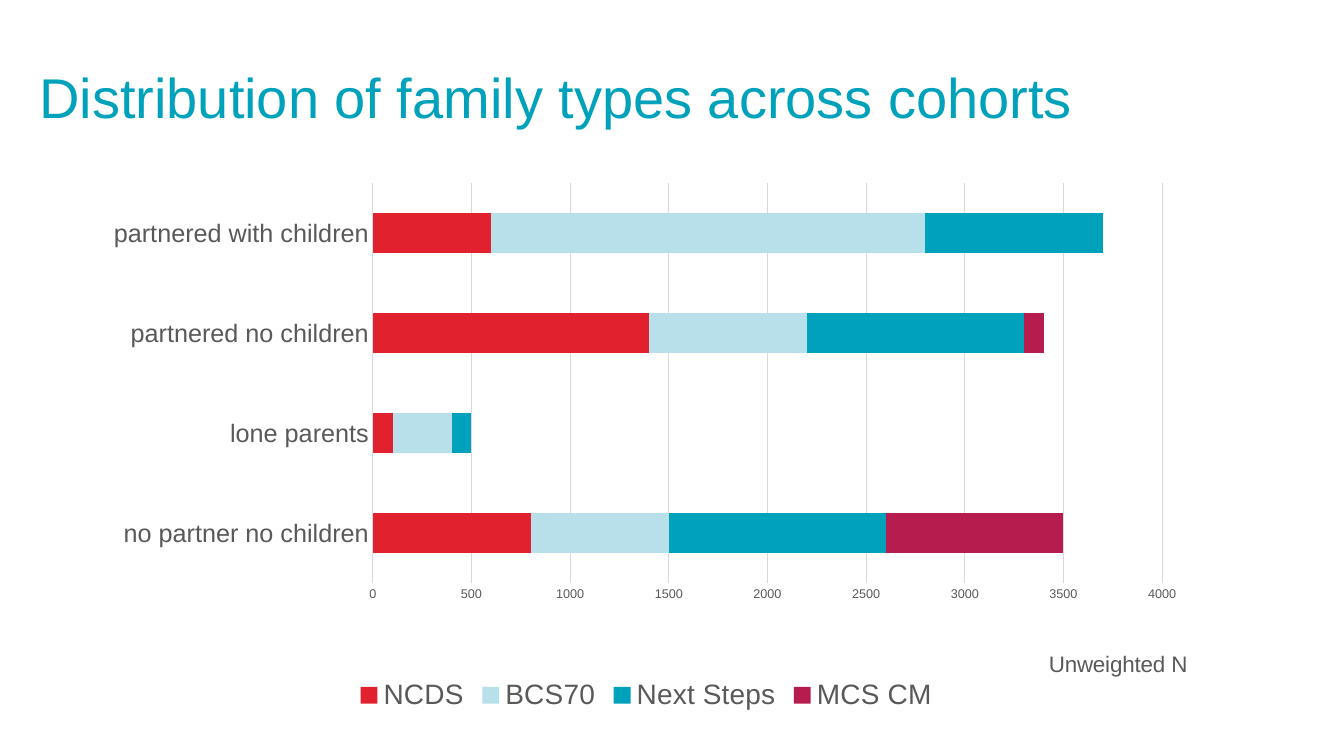
"""Build a slide with a stacked bar chart of family types by cohort."""
from lxml import etree
from pptx import Presentation
from pptx.chart.data import CategoryChartData
from pptx.dml.color import RGBColor
from pptx.enum.chart import XL_CHART_TYPE, XL_LEGEND_POSITION, XL_TICK_MARK
from pptx.enum.text import MSO_ANCHOR, PP_ALIGN
from pptx.oxml.ns import qn
from pptx.util import Inches, Pt

STACKED = XL_CHART_TYPE.BAR_STACKED
BOTTOM = XL_LEGEND_POSITION.BOTTOM
NO_TICK = XL_TICK_MARK.NONE
MIDDLE = MSO_ANCHOR.MIDDLE
LEFT = PP_ALIGN.LEFT

FACE = "Arial"
COLORS = {
    "title": "00A1BA",
    "text": "595959",
    "grid": "D9D9D9",
    "NCDS": "E2212F",
    "BCS70": "B7E0EB",
    "Next Steps": "00A1BA",
    "MCS CM": "B61D4E",
}
TYPES = ["no partner no children", "lone parents",
         "partnered no children", "partnered with children"]
COHORTS = {
    "NCDS": (800, 100, 1400, 600),
    "BCS70": (700, 300, 800, 2200),
    "Next Steps": (1100, 100, 1100, 900),
    "MCS CM": (900, 0, 100, 0),
}


def color(name):
    """Return the named colour."""
    return RGBColor.from_string(COLORS[name])


def style(font, size, tone="text"):
    """Set face, size and colour of a font."""
    font.name = FACE
    font.size = Pt(size)
    font.bold = False
    font.color.rgb = color(tone)


def write(frame, text, size=16, tone="text", align=None, spacing=None):
    """Put formatted text in a text frame."""
    frame.text = text
    para = frame.paragraphs[0]
    para.alignment = align
    para.line_spacing = spacing
    style(para.runs[0].font, size, tone)


def rule(line):
    """Draw a line in the thin grid style."""
    line.color.rgb = color("grid")
    line.width = Pt(0.75)


def place(node, index, inner=False, **box):
    """Give a chart part a manual layout in fractions of the chart."""
    for old in node.findall(qn("c:layout")):
        node.remove(old)
    layout = etree.Element(qn("c:layout"))
    manual = etree.SubElement(layout, qn("c:manualLayout"))
    items = {"xMode": "edge", "yMode": "edge", **box}
    if inner:
        items = {"layoutTarget": "inner", **items}
    for tag, value in items.items():
        etree.SubElement(manual, qn(f"c:{tag}")).set("val", str(value))
    node.insert(index, layout)


def add_title(slide, text):
    """Fill and move the title placeholder."""
    title = slide.shapes.title
    title.left, title.top = Inches(0.39), Inches(0.56)
    title.width, title.height = Inches(11.5), Inches(0.87)
    frame = title.text_frame
    frame.margin_left = frame.margin_right = 0
    frame.margin_top = frame.margin_bottom = 0
    frame.vertical_anchor = MIDDLE
    frame.word_wrap = True
    write(frame, text, size=40, tone="title", align=LEFT, spacing=0.9)


def format_axes(chart):
    """Format both axes and the value axis title."""
    for axis, size in ((chart.category_axis, 18), (chart.value_axis, 9)):
        axis.major_tick_mark = axis.minor_tick_mark = NO_TICK
        style(axis.tick_labels.font, size)
    rule(chart.category_axis.format.line)
    scale = chart.value_axis
    scale.minimum_scale, scale.maximum_scale = 0, 4000
    scale.major_unit = 500
    scale.format.line.fill.background()
    scale.has_major_gridlines = True
    rule(scale.major_gridlines.format.line)
    write(scale.axis_title.text_frame, "Unweighted N")
    place(scale.axis_title.element, 1, x=0.86, y=0.87)


def add_bars(slide):
    """Add the stacked bar chart."""
    data = CategoryChartData()
    data.categories = TYPES
    for name, values in COHORTS.items():
        data.add_series(name, values)
    chart = slide.shapes.add_chart(
        STACKED, Inches(0.92), Inches(1.71), Inches(10.98), Inches(5.4), data
    ).chart
    chart.has_title = False
    style(chart.font, 10)
    plot = chart.plots[0]
    plot.vary_by_categories = False
    plot.gap_width, plot.overlap = 150, 100
    for series in plot.series:
        fill = series.format.fill
        fill.solid()
        fill.fore_color.rgb = color(series.name)
    format_axes(chart)
    chart.has_legend = True
    chart.legend.position = BOTTOM
    chart.legend.include_in_layout = False
    style(chart.legend.font, 20)
    area = chart.element.find(".//" + qn("c:plotArea"))
    place(area, 0, inner=True, x=0.253, y=0.02, w=0.713, h=0.735)


def main():
    """Build and save the slide."""
    deck = Presentation()
    deck.slide_width, deck.slide_height = Inches(13.33), Inches(7.5)
    slide = deck.slides.add_slide(deck.slide_layouts[5])
    add_title(slide, "Distribution of family types across cohorts")
    add_bars(slide)
    deck.save("out.pptx")


if __name__ == "__main__":
    main()
